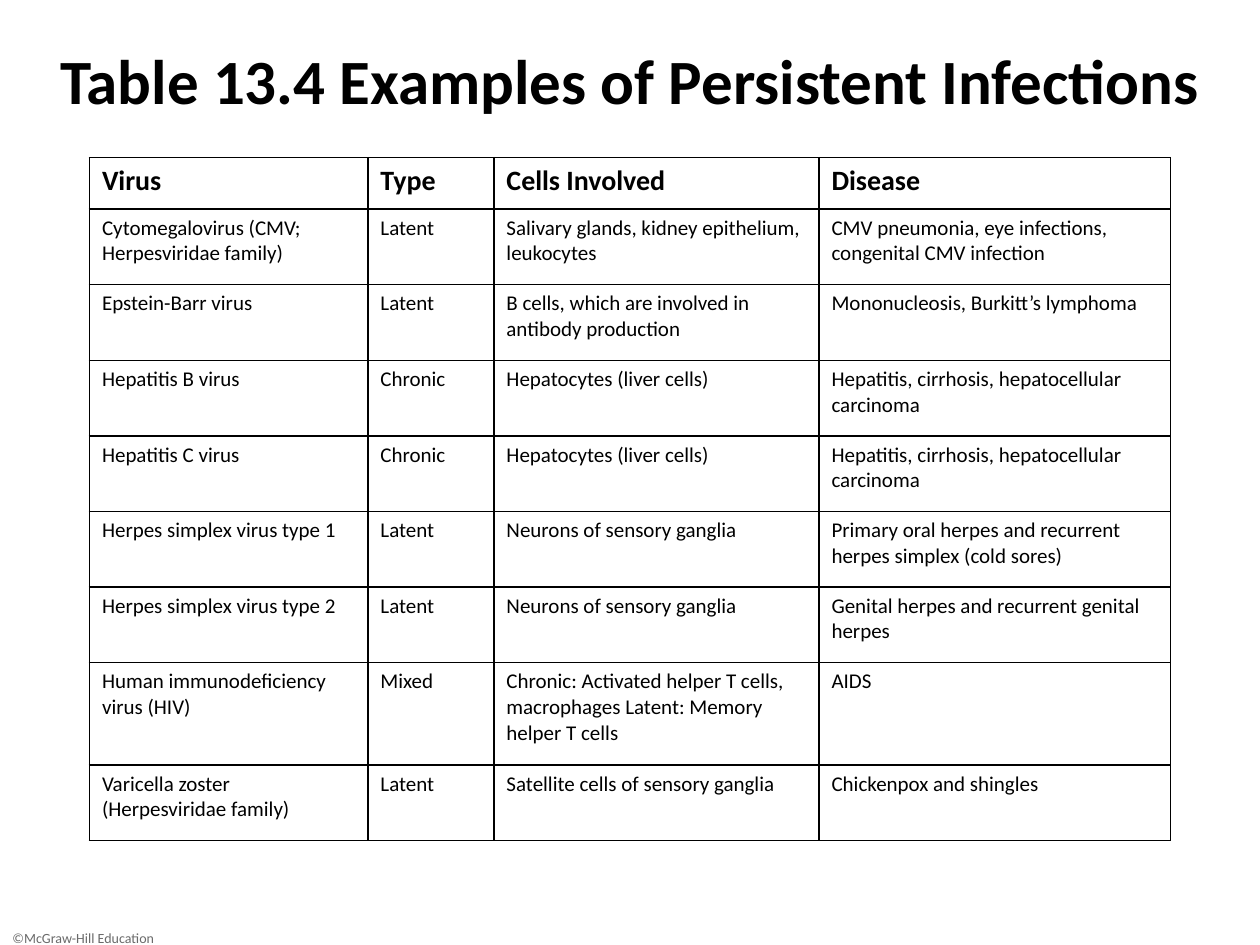
from pptx import Presentation
from pptx import util as u
from pptx.dml.color import RGBColor
from pptx.enum import text as t
from pptx.oxml import parse_xml
from pptx.oxml.ns import nsdecls

PX = 9144  # 100 px to the inch
FONT = "Calibri"
BLACK, WHITE, GREY = "000000", "FFFFFF", "6A6A6A"

COLS = [221, 100, 258, 279]
ROWS = [41] + [60] * 6 + [81, 60]
LIVER = ["Chronic", "Hepatocytes (liver cells)",
         "Hepatitis, cirrhosis, hepatocellular carcinoma"]
NERVE = ["Latent", "Neurons of sensory ganglia"]
DATA = [
    ["Virus", "Type", "Cells Involved", "Disease"],
    ["Cytomegalovirus (CMV; Herpesviridae family)", "Latent",
     "Salivary glands, kidney epithelium, leukocytes",
     "CMV pneumonia, eye infections, congenital CMV infection"],
    ["Epstein-Barr virus", "Latent",
     "B cells, which are involved in antibody production",
     "Mononucleosis, Burkitt’s lymphoma"],
    ["Hepatitis B virus", *LIVER],
    ["Hepatitis C virus", *LIVER],
    ["Herpes simplex virus type 1", *NERVE,
     "Primary oral herpes and recurrent herpes simplex (cold sores)"],
    ["Herpes simplex virus type 2", *NERVE,
     "Genital herpes and recurrent genital herpes"],
    ["Human immunodeficiency virus (HIV)", "Mixed",
     "Chronic: Activated helper T cells, macrophages Latent: Memory helper T cells",
     "AIDS"],
    ["Varicella zoster (Herpesviridae family)", "Latent",
     "Satellite cells of sensory ganglia", "Chickenpox and shingles"],
]


def px(*nums):
    return [u.Emu(n * PX) for n in nums]


def color(code):
    return RGBColor.from_string(code)


def write(frame, words, size, code=BLACK, bold=False, align=t.PP_ALIGN.LEFT):
    frame.word_wrap = True
    para = frame.paragraphs[0]
    para.alignment = align
    run = para.add_run()
    run.text = words
    font = run.font
    font.name, font.size, font.bold = FONT, u.Pt(size), bold
    font.color.rgb = color(code)


def add_title(slide, words):
    title = slide.shapes.title
    title.left, title.top, title.width, title.height = px(0, 25, 1000, 67)
    frame = title.text_frame
    frame.auto_size = t.MSO_AUTO_SIZE.NONE
    frame.vertical_anchor = t.MSO_ANCHOR.TOP
    frame.margin_top, frame.margin_bottom = px(8, 0)
    write(frame, words, 36, bold=True, align=t.PP_ALIGN.CENTER)


def add_note(slide, words):
    box = slide.shapes.add_textbox(*px(0, 733, 150, 17))
    write(box.text_frame, words, 8, GREY)


def add_border(cell):
    props = cell._tc.get_or_add_tcPr()
    for i, side in enumerate(("lnL", "lnR", "lnT", "lnB")):
        props.insert(i, parse_xml(
            f'<a:{side} {nsdecls("a")} w="{u.Pt(1)}"><a:solidFill>'
            f'<a:srgbClr val="{BLACK}"/></a:solidFill></a:{side}>'))


def add_grid(slide):
    box = px(71, 125, sum(COLS), sum(ROWS))
    table = slide.shapes.add_table(len(ROWS), len(COLS), *box).table
    table.horz_banding = False
    for col, width in zip(table.columns, px(*COLS)):
        col.width = width
    for row, height in zip(table.rows, px(*ROWS)):
        row.height = height
    for r, line in enumerate(DATA):
        for c, words in enumerate(line):
            cell = table.cell(r, c)
            cell.fill.solid()
            cell.fill.fore_color.rgb = color(WHITE)
            add_border(cell)
            write(cell.text_frame, words, 12 if r else 16, bold=r == 0)


def main():
    prs = Presentation()
    prs.slide_width, prs.slide_height = px(1000, 750)
    slide = prs.slides.add_slide(prs.slide_layouts[5])
    # Copyright line
    add_note(slide, "©McGraw-Hill Education")
    # Heading
    add_title(slide, "Table 13.4 Examples of Persistent Infections")
    # Table of viruses
    add_grid(slide)
    prs.save("out.pptx")


if __name__ == "__main__":
    main()
